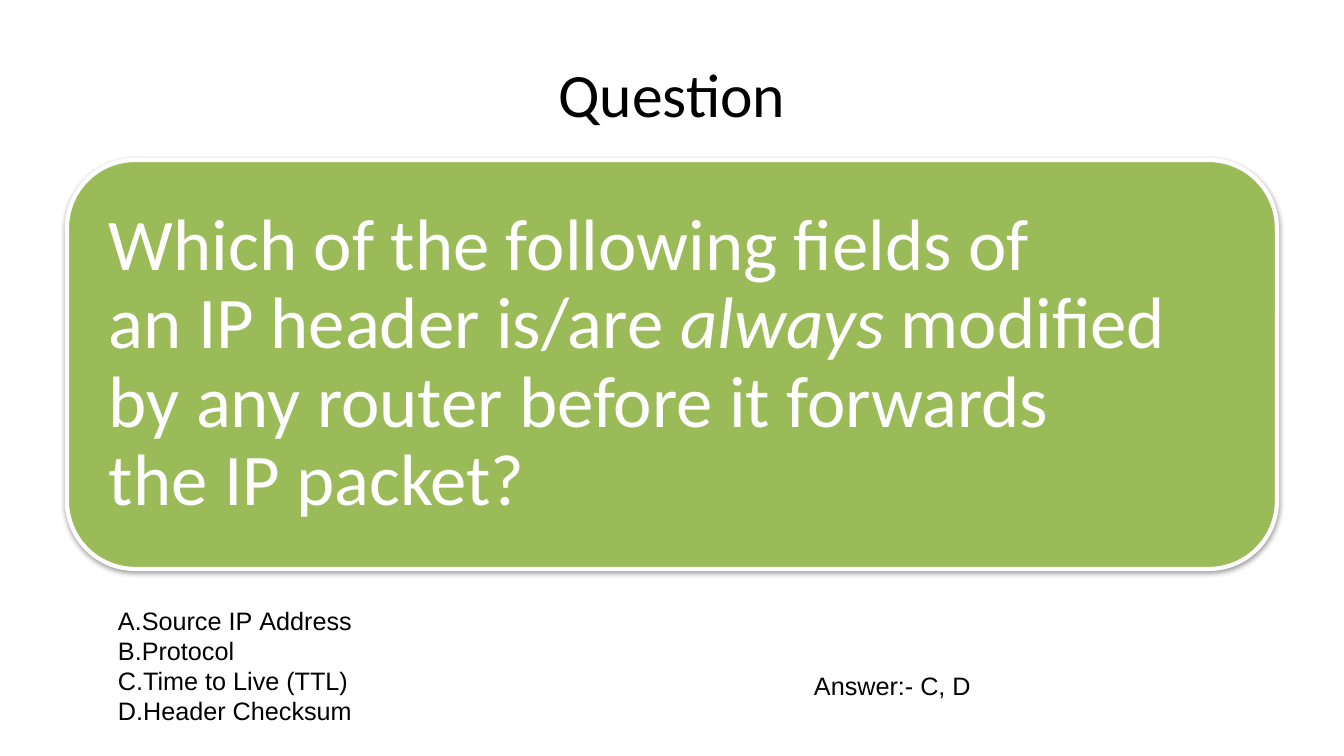
from lxml.etree import SubElement
from pptx import Presentation
from pptx.dml.color import RGBColor
from pptx.enum.shapes import MSO_SHAPE
from pptx.enum.text import MSO_ANCHOR, MSO_AUTO_SIZE, PP_ALIGN
from pptx.oxml import parse_xml
from pptx.oxml.ns import nsdecls, qn
from pptx.util import Pt

SLIDE_WIDTH, SLIDE_HEIGHT = 1344, 756
EMU_PER_PX = 12192000 / SLIDE_WIDTH

TITLE_FONT = {"name": "Calibri", "size": Pt(44)}
QUESTION_FONT = {"name": "Calibri", "size": Pt(52)}
ANSWER_FONT = {"name": "Arial", "size": Pt(18)}

# Non-breaking space, which keeps terms such as "IP packet" on one line
NBSP = chr(160)
QUESTION = [
    (f"Which of the following fields of an{NBSP}IP{NBSP}header is/are{NBSP}", False),
    (f"always{NBSP}", True),
    (f"modified by any router before it forwards the{NBSP}IP{NBSP}packet?", False),
]
OPTIONS = [
    f"Source{NBSP}IP{NBSP}Address",
    "Protocol",
    f"Time to Live{NBSP}(TTL)",
    "Header Checksum",
]


def px(length):
    return round(length * EMU_PER_PX)


def color(value):
    return RGBColor.from_string(value)


def set_all(target, values):
    for name, value in values.items():
        setattr(target, name, value)


def place(shape, box):
    set_all(shape, dict(zip(("left", "top", "width", "height"), map(px, box))))


def add_span(para, text, font, ink, italic=False):
    span = para.add_run()
    span.text = text
    set_all(span.font, {**font, "italic": italic})
    span.font.color.rgb = color(ink)


def frame_text(shape, anchor, inset_x=10, inset_y=5):
    frame = shape.text_frame
    set_all(frame, {
        "word_wrap": True, "auto_size": MSO_AUTO_SIZE.NONE, "vertical_anchor": anchor,
        "margin_left": px(inset_x), "margin_right": px(inset_x),
        "margin_top": px(inset_y), "margin_bottom": px(inset_y),
    })
    return frame


def fill_title(page, box):
    title = page.shapes.title
    place(title, box)
    para = frame_text(title, MSO_ANCHOR.MIDDLE).paragraphs[0]
    para.alignment = PP_ALIGN.CENTER
    add_span(para, "Question", TITLE_FONT, "000000")


def add_question_card(page, box):
    card = page.shapes.add_shape(MSO_SHAPE.ROUNDED_RECTANGLE, *map(px, box))
    card.fill.solid()
    card.fill.fore_color.rgb = color("9BBB59")
    card.line.color.rgb = color("FFFFFF")
    card.line.width = Pt(3)

    # Soft shadow below the card
    card._element.spPr.append(parse_xml(
        f'<a:effectLst {nsdecls("a")}><a:outerShdw blurRad="40000" dist="20000" '
        'dir="5400000" rotWithShape="0"><a:srgbClr val="000000">'
        '<a:alpha val="38000"/></a:srgbClr></a:outerShdw></a:effectLst>'))

    para = frame_text(card, MSO_ANCHOR.MIDDLE, 22, 22).paragraphs[0]
    set_all(para, {"alignment": PP_ALIGN.LEFT, "line_spacing": 0.9})
    for text, italic in QUESTION:
        add_span(para, text, QUESTION_FONT, "FFFFFF", italic)


def fill_options(page, box):
    body = page.placeholders[1]
    place(body, box)
    frame = frame_text(body, MSO_ANCHOR.TOP)
    for index, option in enumerate(OPTIONS):
        para = frame.add_paragraph() if index else frame.paragraphs[0]
        set_all(para, {"space_before": Pt(0), "alignment": PP_ALIGN.LEFT})
        properties = para._p.get_or_add_pPr()
        properties.set("marL", "0")
        properties.set("indent", "0")
        SubElement(properties, qn("a:buFont"), typeface="+mj-lt")
        SubElement(properties, qn("a:buAutoNum"), type="alphaUcPeriod")
        add_span(para, option, ANSWER_FONT, "000000")


def add_answer(page, box):
    answer = page.shapes.add_textbox(*map(px, box))
    para = frame_text(answer, MSO_ANCHOR.TOP).paragraphs[0]
    add_span(para, "Answer:- C, D", ANSWER_FONT, "000000")


def main():
    deck = Presentation()
    set_all(deck, {"slide_width": px(SLIDE_WIDTH), "slide_height": px(SLIDE_HEIGHT)})
    page = deck.slides.add_slide(deck.slide_layouts[1])
    page.background.fill.solid()
    page.background.fill.fore_color.rgb = color("FFFFFF")

    fill_title(page, (67, 30, 1210, 126))
    add_question_card(page, (67, 160, 1210, 409))
    fill_options(page, (108, 600, 672, 132))
    add_answer(page, (804, 665, 449, 40))
    deck.save("out.pptx")


if __name__ == "__main__":
    main()
